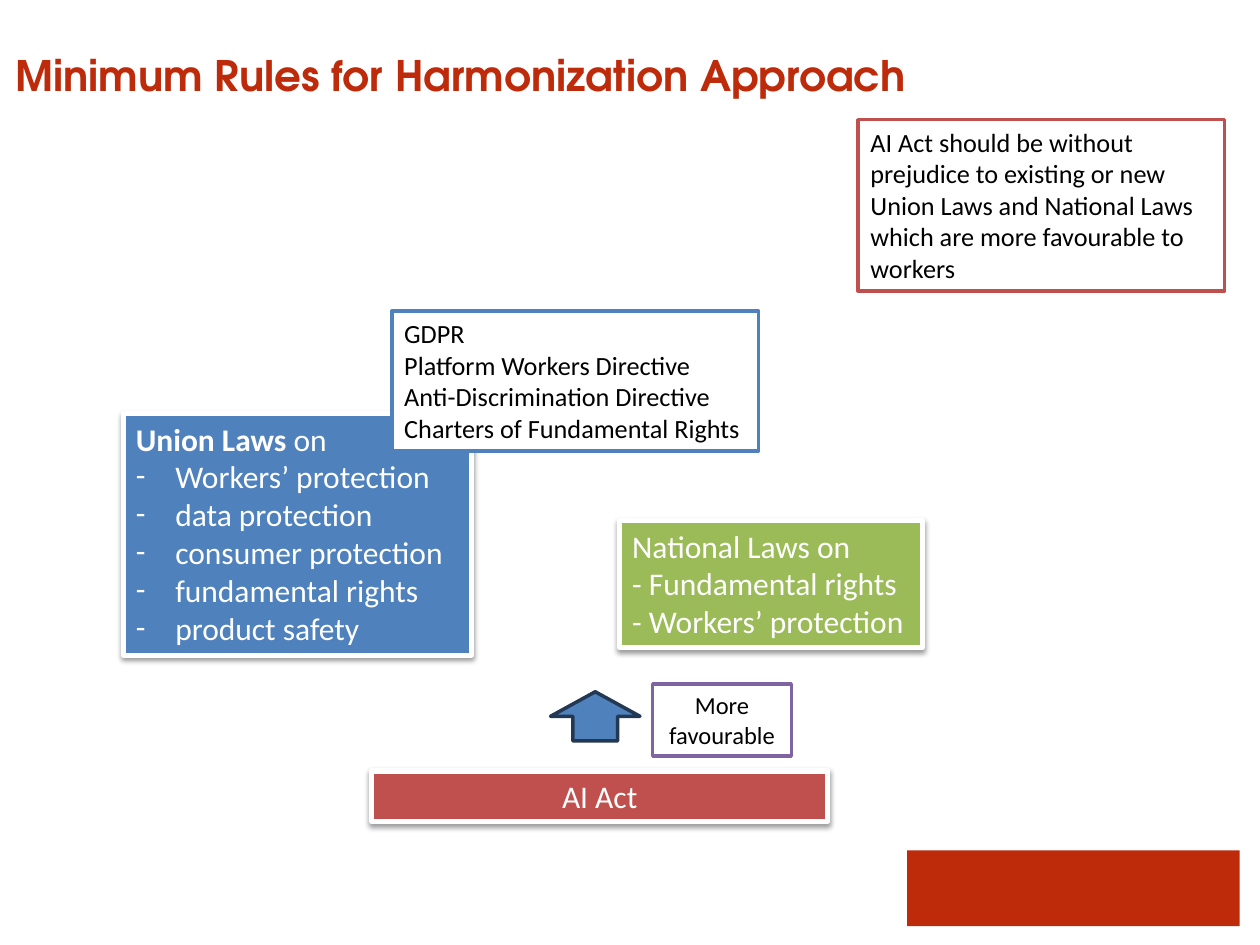
from lxml import etree
from pptx import Presentation
from pptx.dml.color import RGBColor
from pptx.enum import shapes, text
from pptx.oxml import ns
from pptx.util import Pt

THEME = {
    "brand": "BD2B0B", "red": "C0504D", "blue": "4F81BD", "green": "9BBB59",
    "purple": "8064A2", "navy": "233953", "white": "FFFFFF", "black": "000000",
    "title": 24, "law": 18, "note": 15, "label": 14,
    "body_font": "Calibri", "title_font": "TeX Gyre Adventor",
}
LEFT, CENTER = text.PP_ALIGN.LEFT, text.PP_ALIGN.CENTER
RECT, UP_ARROW = shapes.MSO_SHAPE.RECTANGLE, shapes.MSO_SHAPE.UP_ARROW


def add_block(preset, place, fill, line=None, width=0, shadow=False):
    block = slide.shapes.add_shape(preset, *map(Pt, place))
    block.shadow.inherit = False
    block.fill.solid()
    block.fill.fore_color.rgb = RGBColor.from_string(THEME[fill])
    if line:
        block.line.color.rgb = RGBColor.from_string(THEME[line])
        block.line.width = Pt(width)
    else:
        block.line.fill.background()
    if shadow:
        effects = block._element.spPr.find(ns.qn("a:effectLst"))
        outer = etree.SubElement(effects, ns.qn("a:outerShdw"), blurRad=str(Pt(3.1)),
                                 dist=str(Pt(1.6)), dir="5400000", rotWithShape="0")
        tint = etree.SubElement(outer, ns.qn("a:srgbClr"), val=THEME["black"])
        etree.SubElement(tint, ns.qn("a:alpha"), val="38000")
    return block


def write(block, lines, size, color, align=LEFT, font="body_font", bold=False):
    frame = block.text_frame
    frame.word_wrap = True
    frame.vertical_anchor = text.MSO_ANCHOR.TOP
    for index, words in enumerate(lines):
        paragraph = frame.paragraphs[0] if index == 0 else frame.add_paragraph()
        paragraph.alignment = align
        run = paragraph.add_run()
        run.text = words
        run.font.color.rgb = RGBColor.from_string(THEME[color])
        look = {"size": Pt(THEME[size]), "name": THEME[font], "bold": bold}
        for key, value in look.items():
            setattr(run.font, key, value)
    return frame.paragraphs


deck = Presentation()
deck.slide_width, deck.slide_height = Pt(720), Pt(540)
slide = deck.slides.add_slide(deck.slide_layouts[6])

add_block(RECT, (518.4, 486, 190, 43.2), "brand")

title = slide.shapes.add_textbox(*map(Pt, (-68.4, 31.7, 663.1, 51.1)))
heading = write(title, ["Minimum Rules for Harmonization Approach"],
                "title", "brand", CENTER, "title_font", True)
heading[0].line_spacing = Pt(22)

ai_act = add_block(RECT, (212.4, 440.6, 260.6, 28.8), "red", "white", 3, True)
write(ai_act, ["AI Act"], "law", "white", CENTER)

union_laws = add_block(RECT, (70.6, 236.2, 198.7, 138.2), "blue", "white", 3, True)
union_lines = write(union_laws, [
    "Union Laws ", "Workers’ protection", "data protection",
    "consumer protection", "fundamental rights", "product safety",
], "law", "white")
union_lines[0].runs[0].font.bold = True
connective = union_lines[0].add_run()
connective.text = "on"
connective.font.color.rgb = RGBColor.from_string(THEME["white"])
for key, value in {"size": Pt(THEME["law"]), "name": THEME["body_font"]}.items():
    setattr(connective.font, key, value)
for topic in union_lines[1:]:
    properties = topic._p.get_or_add_pPr()
    properties.set("marL", str(Pt(22.5)))
    properties.set("indent", str(Pt(-22.5)))
    etree.SubElement(properties, ns.qn("a:buFont"), typeface=THEME["body_font"])
    etree.SubElement(properties, ns.qn("a:buChar"), char="-")

national_laws = add_block(RECT, (354.2, 297.4, 172.8, 72.7), "green", "white", 3, True)
write(national_laws, ["National Laws on", "- Fundamental rights", "- Workers’ protection"],
      "law", "white")

examples = add_block(RECT, (223.9, 177.8, 209.5, 79.9), "white", "blue", 2)
write(examples, ["GDPR", "Platform Workers Directive", "Anti-Discrimination Directive",
                 "Charters of Fundamental Rights"], "note", "black")

favourable = add_block(RECT, (373, 391, 79.2, 41), "white", "purple", 2)
write(favourable, ["More", "favourable"], "label", "black", CENTER)

add_block(UP_ARROW, (314.6, 395.3, 51.1, 28.1), "blue", "navy", 2)

principle = add_block(RECT, (490.3, 68.4, 209.5, 97.9), "white", "red", 2)
write(principle, ["AI Act should be without prejudice to existing or new Union Laws and "
                  "National Laws which are more favourable to workers"], "note", "black")

deck.save("out.pptx")
